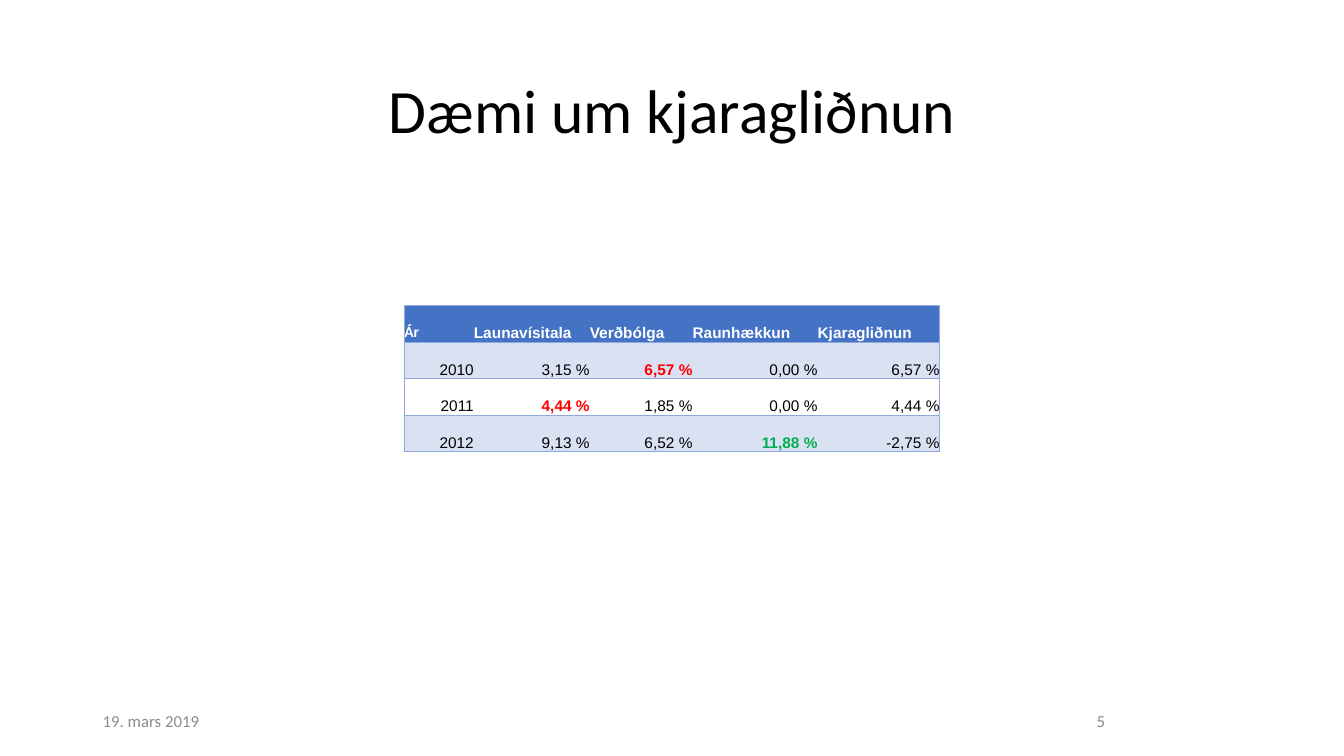
from dataclasses import dataclass

from lxml import etree
from pptx import Presentation
from pptx import util as u
from pptx.dml.color import RGBColor
from pptx.enum import text
from pptx.oxml import ns


@dataclass(frozen=True)
class Theme:
    black: str = "000000"
    white: str = "FFFFFF"
    gray: str = "8C8C8C"
    red: str = "FF0000"
    green: str = "00B050"
    header: str = "4472C4"
    band: str = "D9E1F2"
    border: str = "8EA9DB"
    title_size: int = 44
    footer_size: int = 12
    table_size: int = 11
    border_width: float = 0.5
    body_font: str = "Calibri"
    table_font: str = "Arial"


theme = Theme()
LEFT, CENTER, RIGHT = text.PP_ALIGN.LEFT, text.PP_ALIGN.CENTER, text.PP_ALIGN.RIGHT


def write(frame, words, *, size, color, font=theme.body_font, bold=False, align=LEFT, spacing=None):
    paragraph = frame.paragraphs[0]
    paragraph.alignment = align
    paragraph.line_spacing = spacing
    run = paragraph.add_run()
    run.text = words
    run.font.size = u.Pt(size)
    run.font.name = font
    run.font.bold = bold
    run.font.color.rgb = RGBColor.from_string(color)


def add_border(cell, side):
    line = etree.SubElement(cell._tc.get_or_add_tcPr(), ns.qn(f"a:ln{side}"),
                            w=str(int(u.Pt(theme.border_width))))
    fill = etree.SubElement(line, ns.qn("a:solidFill"))
    etree.SubElement(fill, ns.qn("a:srgbClr"), val=theme.border)


presentation = Presentation()
presentation.slide_width = u.Inches(13.33)
presentation.slide_height = u.Inches(7.5)
slide = presentation.slides.add_slide(presentation.slide_layouts[6])

# Title, date and page number
footer = dict(size=theme.footer_size, color=theme.gray)
labels = [
    ("Dæmi um kjaragliðnun", (0.92, 0.4, 11.5, 1.45),
     dict(size=theme.title_size, color=theme.black, align=CENTER, spacing=0.9)),
    ("19. mars 2019", (0.92, 6.95, 3, 0.4), footer),
    ("5", (9.42, 6.95, 3, 0.4), dict(footer, align=CENTER)),
]
for words, box, style in labels:
    frame = slide.shapes.add_textbox(*map(u.Inches, box)).text_frame
    frame.word_wrap = True
    frame.vertical_anchor = text.MSO_ANCHOR.MIDDLE
    write(frame, words, **style)

# Table contents
rows = [
    ["Ár", "Launavísitala", "Verðbólga", "Raunhækkun", "Kjaragliðnun"],
    ["2010", "3,15 %", "6,57 %", "0,00 %", "6,57 %"],
    ["2011", "4,44 %", "1,85 %", "0,00 %", "4,44 %"],
    ["2012", "9,13 %", "6,52 %", "11,88 %", "-2,75 %"],
]
highlights = {(1, 2): theme.red, (2, 1): theme.red, (3, 3): theme.green}
column_widths = [0.69, 1.15, 1.02, 1.24, 1.21]
table_height = 1.45

# Table grid, without a built-in style
table = slide.shapes.add_table(
    len(rows), len(column_widths), u.Inches(4.01), u.Inches(3.03),
    u.Inches(sum(column_widths)), u.Inches(table_height)).table
table.horz_banding = False
table._tbl.tblPr.find(ns.qn("a:tableStyleId")).text = "{2D5ABB26-0587-4C30-8999-92F81FD0307C}"
for column, width in zip(table.columns, column_widths):
    column.width = u.Inches(width)
for row in table.rows:
    row.height = u.Inches(table_height / len(rows))

# Cells: rules between rows, outer edges left and right, shaded odd rows
last = len(column_widths) - 1
for row_index, values in enumerate(rows):
    is_header = row_index == 0
    for column_index, value in enumerate(values):
        cell = table.cell(row_index, column_index)
        cell.margin_left = cell.margin_right = cell.margin_top = cell.margin_bottom = 0
        cell.vertical_anchor = text.MSO_ANCHOR.BOTTOM
        edges = {0: "LTB", last: "RTB"}
        for side in edges.get(column_index, "TB"):
            add_border(cell, side)
        if is_header or row_index % 2:
            cell.fill.solid()
            cell.fill.fore_color.rgb = RGBColor.from_string(theme.header if is_header else theme.band)
        else:
            cell.fill.background()
        highlight = highlights.get((row_index, column_index))
        write(cell.text_frame, value,
              size=theme.table_size,
              color=theme.white if is_header else highlight or theme.black,
              font=theme.body_font if is_header and column_index == 0 else theme.table_font,
              bold=is_header or highlight is not None,
              align=LEFT if is_header else RIGHT)

presentation.save("out.pptx")
